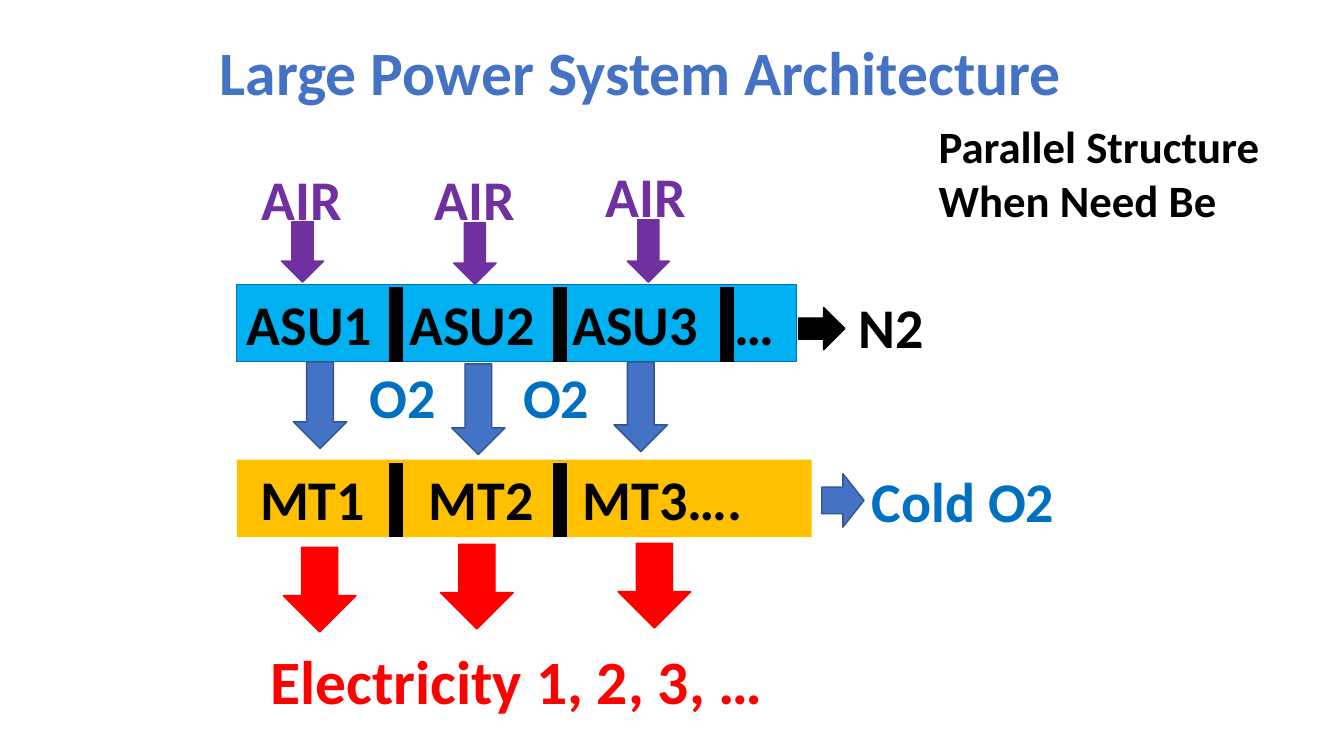
import pptx
import pptx.util
import pptx.dml.color
import pptx.enum.shapes
import pptx.enum.text
import pptx.oxml.ns
from lxml import etree

Inches = pptx.util.Inches
Pt = pptx.util.Pt
Shape = pptx.enum.shapes.MSO_SHAPE
Anchor = pptx.enum.text.MSO_ANCHOR
Align = pptx.enum.text.PP_ALIGN
qn = pptx.oxml.ns.qn

COLORS = {
    "black": "000000", "blue": "4472C4", "navy": "325491", "purple": "7030A0",
    "sky": "00B0F0", "oxygen": "0070C0", "gold": "FFC000", "red": "FF0000",
}


def color(name):
    return pptx.dml.color.RGBColor.from_string(COLORS[name])


def write(shape, lines, ink, size=40, align=Align.LEFT, wrap=True):
    frame = shape.text_frame
    frame.word_wrap = wrap
    frame.auto_size = pptx.enum.text.MSO_AUTO_SIZE.SHAPE_TO_FIT_TEXT
    frame.vertical_anchor = Anchor.TOP
    frame.text = lines
    for para in frame.paragraphs:
        para.alignment = align
        para.font.name = "Calibri"
        para.font.size = Pt(size)
        para.font.bold = True
        para.font.color.rgb = color(ink)
    return frame


def add_label(page, box, lines, ink, **style):
    label = page.shapes.add_textbox(*map(Inches, box))
    return write(label, lines, ink, **style)


def add_block(page, kind, box, fill, line=None, width=1):
    block = page.shapes.add_shape(kind, *map(Inches, box))
    block.shadow.inherit = False
    block.fill.solid()
    block.fill.fore_color.rgb = color(fill)
    if line:
        block.line.color.rgb = color(line)
        block.line.width = Pt(width)
    else:
        block.line.fill.background()
    return block


def add_divider(page, x, top, bottom):
    divider = page.shapes.add_connector(
        pptx.enum.shapes.MSO_CONNECTOR.STRAIGHT,
        Inches(x), Inches(top), Inches(x), Inches(bottom))
    divider.line.color.rgb = color("black")
    divider.line.width = Pt(10)
    etree.SubElement(divider._element.spPr, qn("a:effectLst"))


def add_unit_row(page, box, units, tabs, inset, dividers, fill, line=None):
    """A bar of parallel units, its names set on tab stops."""
    left, top, width, height = box
    bar = add_block(page, Shape.RECTANGLE, box, fill, line, 0.75)
    frame = write(bar, "\t".join(units), "black")
    frame.margin_left = Inches(inset)
    properties = frame.paragraphs[0]._p.get_or_add_pPr()
    stops = etree.SubElement(properties, qn("a:tabLst"))
    for tab in tabs:
        etree.SubElement(stops, qn("a:tab"), pos=str(Inches(tab)), algn="l")
    for offset in dividers:
        add_divider(page, left + offset, top + 0.03, top + height)


def add_down_arrows(page, boxes, fill, line):
    for box in boxes:
        add_block(page, Shape.DOWN_ARROW, box, fill, line)


def add_headings(page):
    title = add_label(page, (0.22, 0.1, 12.41, 1.03),
                      "Large Power System Architecture ", "blue",
                      size=44, align=Align.CENTER)
    title.auto_size = pptx.enum.text.MSO_AUTO_SIZE.NONE
    title.vertical_anchor = Anchor.BOTTOM
    title.paragraphs[0].line_spacing = 0.9
    add_label(page, (9.21, 1.13, 3.42, 1.18),
              "Parallel Structure\nWhen Need Be", "black", size=32, wrap=False)


def add_air_stage(page):
    for x, y in ((2.5, 1.58), (4.21, 1.58), (5.91, 1.55)):
        add_label(page, (x, y, 1.01, 0.77), "AIR", "purple", wrap=False)
    add_down_arrows(page, [(2.79, 2.2, 0.42, 0.6), (4.5, 2.21, 0.42, 0.61),
                           (6.22, 2.18, 0.42, 0.62)], "purple", "purple")


def add_separation_stage(page):
    add_unit_row(page, (2.35, 2.82, 5.55, 0.77), ["ASU1", "ASU2", "ASU3", "…"],
                 (1.61, 3.23, 4.84), 0.1, (1.58, 3.2, 4.86), "sky", "oxygen")
    add_block(page, Shape.RIGHT_ARROW, (7.92, 3.05, 0.46, 0.42), "black", "black")
    add_label(page, (8.42, 2.85, 0.85, 0.77), "N2", "black", wrap=False)
    # Oxygen flowing down to the turbines
    add_down_arrows(page, [(2.91, 3.59, 0.53, 0.86), (4.48, 3.61, 0.53, 0.9),
                           (6.09, 3.59, 0.53, 0.89)], "blue", "navy")
    for x in (3.57, 5.09):
        add_label(page, (x, 3.55, 0.91, 0.77), "O2", "oxygen")


def add_turbine_stage(page):
    add_unit_row(page, (2.35, 4.56, 5.7, 0.77), ["MT1", "MT2", "MT3…."],
                 (1.67, 3.2), 0.23, (1.58, 3.2), "gold")
    add_block(page, Shape.RIGHT_ARROW, (8.15, 4.7, 0.42, 0.53), "blue", "navy")
    add_label(page, (8.55, 4.58, 2.1, 0.77), "Cold O2", "oxygen")
    # Electricity output
    add_down_arrows(page, [(2.81, 5.43, 0.72, 0.84), (4.37, 5.4, 0.72, 0.84),
                           (6.13, 5.39, 0.72, 0.84)], "red", "red")
    add_label(page, (2.58, 6.33, 5.24, 0.84), "Electricity 1, 2, 3, … ", "red",
              size=44, align=Align.CENTER)


def main():
    deck = pptx.Presentation()
    deck.slide_width, deck.slide_height = Inches(13.33), Inches(7.5)
    page = deck.slides.add_slide(deck.slide_layouts[6])
    add_headings(page)
    add_air_stage(page)
    add_separation_stage(page)
    add_turbine_stage(page)
    deck.save("out.pptx")


if __name__ == "__main__":
    main()
